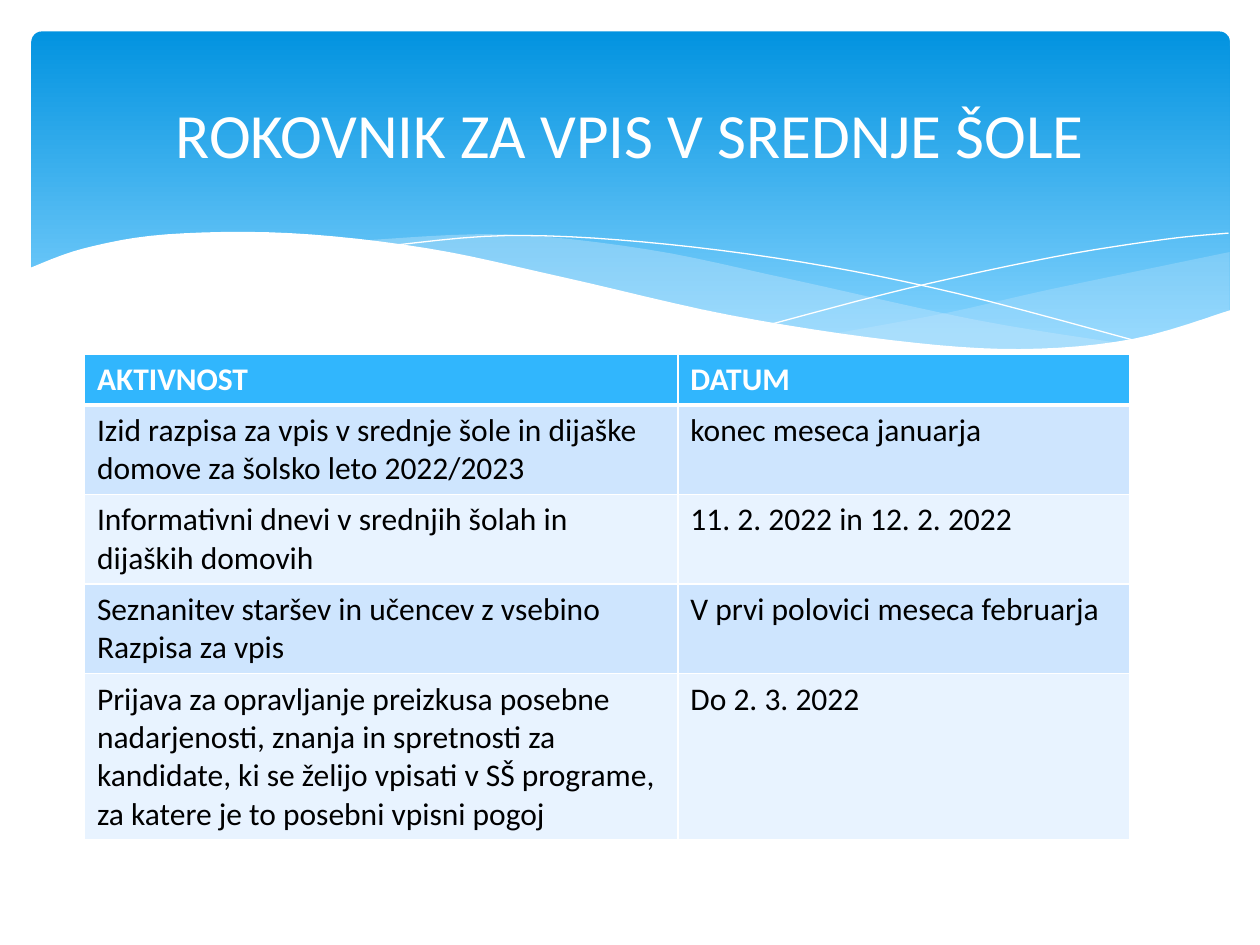
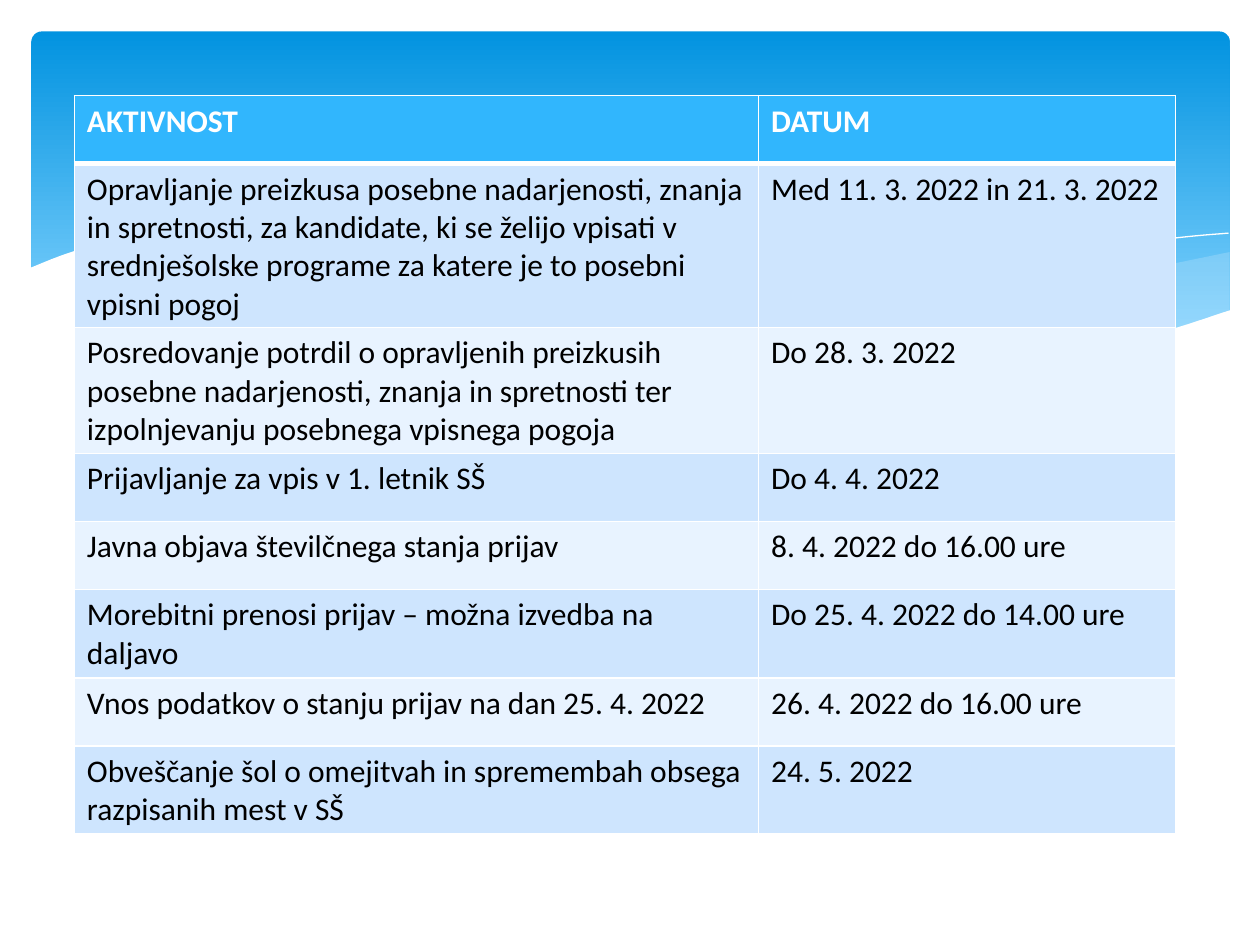
"""Build two slides with the school enrolment calendar."""
from dataclasses import dataclass

from lxml import etree
from pptx import Presentation
from pptx.dml.color import RGBColor
from pptx.enum import shapes, text
from pptx.oxml import ns
from pptx.util import Inches, Pt

FONT = "Calibri"
STEPS = 6
HUE = {
    "white": "FFFFFF",
    "black": "000000",
    "deep": "0293E0",
    "pale": "83D3FE",
    "mist": "C6E7FC",
    "head": "31B6FD",
    "odd": "CEE5FE",
    "even": "E8F3FF",
}
Point = tuple[float, float]


@dataclass
class Wave:
    """Smooth strokes through knots in inches, filled or drawn as a hairline."""
    strokes: list[list[Point]]
    fill: str = ""
    alpha: int = 100


@dataclass
class Plan:
    """Calendar table with its place, its sizes and its dated tasks."""
    left: float
    top: float
    cols: tuple[float, float]
    row: float
    tasks: list[tuple[str, str]]
    title: str = ""


WAVES = [
    Wave([[(9.76, 2), (8.32, 2.3), (7.53, 2.48), (6.61, 2.65)],
          [(6.61, 2.65), (7.18, 2.73), (8.03, 2.78), (8.89, 2.72), (9.76, 2.47)]],
         "mist", 29),
    Wave([[(8.93, 2.73), (7.75, 2.54), (6.29, 2.22), (5.14, 1.98), (3.99, 1.86),
           (2.86, 1.91)],
          [(2.86, 1.91), (4.04, 2.11), (5.3, 2.4), (6.65, 2.66), (7.85, 2.78),
           (8.93, 2.73)]], "mist", 40),
    Wave([[(3.09, 1.95), (4.01, 1.87), (5.1, 1.92), (6.36, 2.08), (7.6, 2.33),
           (9.07, 2.72)]]),
    Wave([[(6.13, 2.57), (7.2, 2.29), (8.36, 2.04), (9.24, 1.9), (9.75, 1.85)]]),
    Wave([[(9.77, 2.46), (8.99, 2.69), (8.09, 2.77), (7.08, 2.7), (5.79, 2.5),
           (4.47, 2.2), (3.39, 1.97), (2.3, 1.85), (1.32, 1.86), (0.67, 1.97),
           (0.23, 2.13)],
          [(0.23, 3.29), (9.77, 3.29)]], "white"),
]

PLANS = [
    Plan(0.67, 2.81, (4.71, 3.59), 0.4, [
        ("Izid razpisa za vpis v srednje šole in dijaške domove za šolsko leto 2022/2023",
         "konec meseca januarja"),
        ("Informativni dnevi v srednjih šolah in dijaških domovih",
         "11. 2. 2022 in 12. 2. 2022"),
        ("Seznanitev staršev in učencev z vsebino Razpisa za vpis",
         "V prvi polovici meseca februarja"),
        ("Prijava za opravljanje preizkusa posebne nadarjenosti, znanja in spretnosti "
         "za kandidate, ki se želijo vpisati v SŠ programe, za katere je to posebni "
         "vpisni pogoj", "Do 2. 3. 2022"),
    ], "ROKOVNIK ZA VPIS V SREDNJE ŠOLE"),
    Plan(0.59, 0.76, (5.43, 3.31), 0.54, [
        ("Opravljanje preizkusa posebne nadarjenosti, znanja in spretnosti, za "
         "kandidate, ki se želijo vpisati v srednješolske programe za katere je to "
         "posebni vpisni pogoj", "Med 11. 3. 2022 in 21. 3. 2022"),
        ("Posredovanje potrdil o opravljenih preizkusih posebne nadarjenosti, znanja "
         "in spretnosti ter izpolnjevanju posebnega vpisnega pogoja", "Do 28. 3. 2022"),
        ("Prijavljanje za vpis v 1. letnik SŠ", "Do 4. 4. 2022"),
        ("Javna objava številčnega stanja prijav", "8. 4. 2022 do 16.00 ure"),
        ("Morebitni prenosi prijav – možna izvedba na daljavo",
         "Do 25. 4. 2022 do 14.00 ure"),
        ("Vnos podatkov o stanju prijav na dan 25. 4. 2022", "26. 4. 2022 do 16.00 ure"),
        ("Obveščanje šol o omejitvah in spremembah obsega razpisanih mest v SŠ",
         "24. 5. 2022"),
    ]),
]


def tint(name: str) -> RGBColor:
    """Give the named colour."""
    return RGBColor.from_string(HUE[name])


def style(para, size: int, hue: str, bold: bool = False) -> None:
    """Set the font of a paragraph."""
    font = para.font
    font.name, font.size, font.bold = FONT, Pt(size), bold
    font.color.rgb = tint(hue)


def blend(a: float, b: float, c: float, d: float, t: float) -> float:
    """Give the Catmull-Rom value between b and c."""
    return b + t / 2 * (c - a + t * (2 * a - 5 * b + 4 * c - d
                                     + t * (3 * (b - c) + d - a)))


def smooth(knots: list[Point]) -> list[Point]:
    """Trace a smooth curve through the knots."""
    ends = [knots[0], *knots, knots[-1]]
    trace = [tuple(blend(*axis, step / STEPS) for axis in zip(*ends[i:i + 4]))
             for i in range(len(knots) - 1) for step in range(STEPS)]
    return [*trace, knots[-1]]


def draw_wave(slide, wave: Wave) -> None:
    """Draw one curve of the banner."""
    first, *rest = [(Inches(x), Inches(y))
                    for knots in wave.strokes for x, y in smooth(knots)]
    outline = slide.shapes.build_freeform(*first)
    outline.add_line_segments(rest, close=bool(wave.fill))
    shape = outline.convert_to_shape()
    shape.shadow.inherit = False
    if not wave.fill:
        shape.fill.background()
        shape.line.color.rgb = tint("white")
        shape.line.width = Pt(0)
        return
    shape.fill.solid()
    shape.fill.fore_color.rgb = tint(wave.fill)
    if wave.alpha < 100:
        color = next(shape.element.iter(ns.qn("a:srgbClr")))
        etree.SubElement(color, ns.qn("a:alpha"), val=str(wave.alpha * 1000))
    shape.line.fill.background()


def draw_banner(slide) -> None:
    """Draw the blue panel and its waves."""
    panel = slide.shapes.add_shape(shapes.MSO_SHAPE.ROUNDED_RECTANGLE, Inches(0.25),
                                   Inches(0.25), Inches(9.51), Inches(2.7))
    panel.adjustments[0] = 0.03
    panel.shadow.inherit = False
    panel.line.fill.background()
    panel.fill.gradient()
    panel.fill.gradient_angle = 270
    for stop, hue, place in zip(panel.fill.gradient_stops, ("deep", "pale"), (0, 0.9)):
        stop.color.rgb = tint(hue)
        stop.position = place
    for wave in WAVES:
        draw_wave(slide, wave)


def draw_title(slide, title: str) -> None:
    """Write the slide title on the banner."""
    box = slide.shapes.add_textbox(Inches(0.5), Inches(0.37), Inches(9), Inches(1.37))
    frame = box.text_frame
    frame.word_wrap = True
    frame.vertical_anchor = text.MSO_ANCHOR.MIDDLE
    para = frame.paragraphs[0]
    para.text = title
    para.alignment = text.PP_ALIGN.CENTER
    style(para, 36, "white")


def edge(cell, side: str, width: float) -> None:
    """Add a white border to one side of a cell."""
    props = cell._tc.get_or_add_tcPr()
    line = etree.SubElement(props, ns.qn(f"a:ln{side}"), w=str(Pt(width)))
    fill = etree.SubElement(line, ns.qn("a:solidFill"))
    etree.SubElement(fill, ns.qn("a:srgbClr"), val=HUE["white"])


def draw_plan(slide, plan: Plan) -> None:
    """Draw the table of tasks and dates."""
    rows = [("AKTIVNOST", "DATUM"), *plan.tasks]
    table = slide.shapes.add_table(len(rows), len(plan.cols), Inches(plan.left),
                                   Inches(plan.top), Inches(sum(plan.cols)),
                                   Inches(plan.row * len(rows))).table
    for col, width in zip(table.columns, plan.cols):
        col.width = Inches(width)
    for y, row in enumerate(rows):
        table.rows[y].height = Inches(plan.row)
        head = y == 0
        back = "head" if head else "odd" if y % 2 else "even"
        for x, words in enumerate(row):
            cell = table.cell(y, x)
            for side, width in zip("LRTB", (1, 1, 3 if y == 1 else 1, 3 if head else 1)):
                edge(cell, side, width)
            cell.fill.solid()
            cell.fill.fore_color.rgb = tint(back)
            cell.text = words
            style(cell.text_frame.paragraphs[0], 18, "white" if head else "black", head)


def main() -> None:
    """Build and save the deck."""
    deck = Presentation()
    deck.slide_width, deck.slide_height = Inches(10), Inches(7.5)
    for plan in PLANS:
        slide = deck.slides.add_slide(deck.slide_layouts[6])
        draw_banner(slide)
        draw_plan(slide, plan)
        if plan.title:
            draw_title(slide, plan.title)
    deck.save("out.pptx")


if __name__ == "__main__":
    main()
